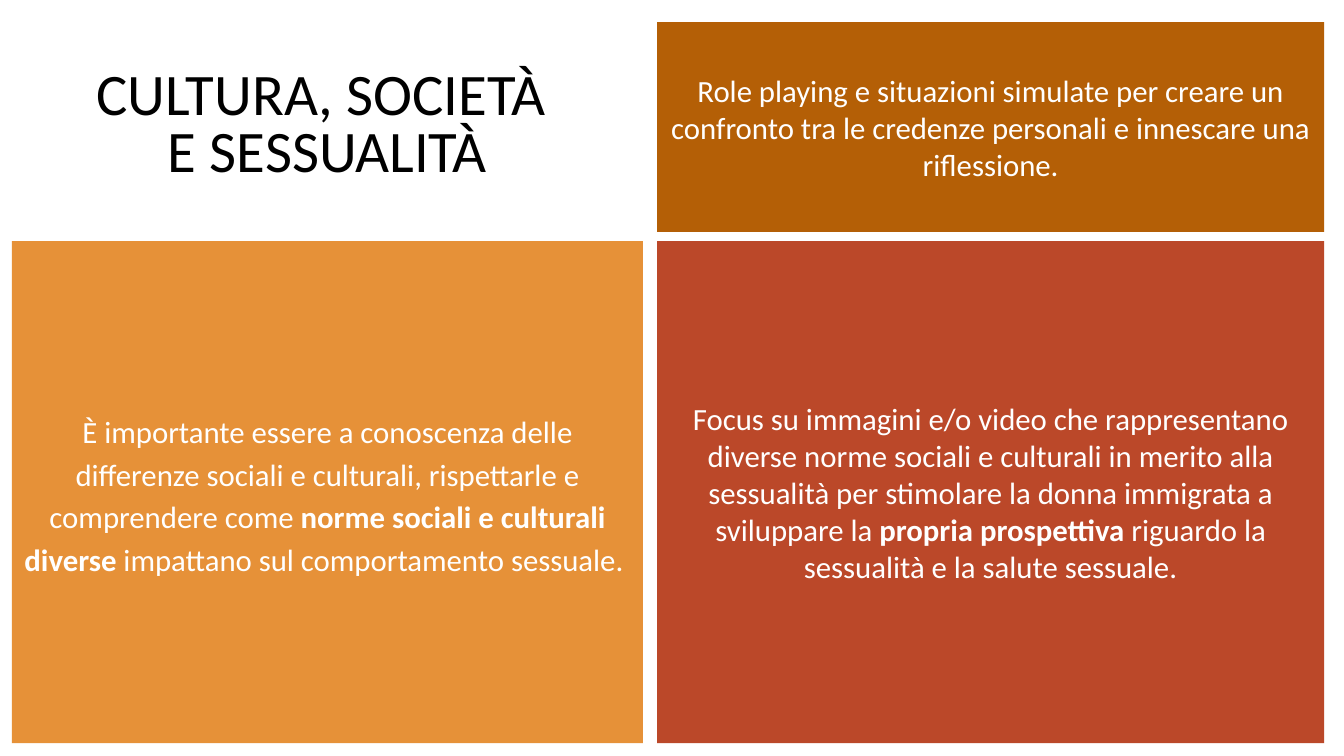
from collections import namedtuple

from lxml import etree
from pptx import Presentation
from pptx.dml.color import RGBColor
from pptx.enum.shapes import MSO_SHAPE
from pptx.enum.text import MSO_ANCHOR, MSO_AUTO_SIZE, PP_ALIGN
from pptx.oxml.ns import qn
from pptx.util import Pt

RECTANGLE = MSO_SHAPE.RECTANGLE
MIDDLE = MSO_ANCHOR.MIDDLE
NO_AUTOFIT = MSO_AUTO_SIZE.NONE
CENTER = PP_ALIGN.CENTER
TITLE_ONLY = 5
FONT = "Calibri"

Box = namedtuple("Box", "left top width height")

LEFT, TOP = 8.6, 15.8
COLUMN_GAP, ROW_GAP = 10, 6.7
LEFT_WIDTH, RIGHT_WIDTH = 450.7, 476.6
TOP_HEIGHT, BOTTOM_HEIGHT = 149.8, 358.6
RIGHT = LEFT + LEFT_WIDTH + COLUMN_GAP
BOTTOM = TOP + TOP_HEIGHT + ROW_GAP

TITLE_LINES = ["CULTURA, SOCIETÀ ", "E SESSUALITÀ"]
ROLE_PLAYING = [
    ("Role playing e situazioni simulate per creare un confronto tra le "
     "credenze personali e innescare una riflessione.", False),
]
AWARENESS = [
    ("È importante essere a conoscenza delle differenze sociali e culturali, "
     "rispettarle e comprendere come ", False),
    ("norme sociali e culturali diverse", True),
    (" impattano sul comportamento sessuale. ", False),
]
FOCUS = [
    ("Focus su immagini e/o video che rappresentano diverse norme sociali e "
     "culturali in merito alla sessualità per stimolare la donna immigrata a "
     "sviluppare la ", False),
    ("propria prospettiva", True),
    (" riguardo la sessualità e la salute sessuale.", False),
]


def color(value):
    return RGBColor.from_string(value)


def format_frame(frame, vertical_inset):
    frame.word_wrap = True
    frame.auto_size = NO_AUTOFIT
    frame.vertical_anchor = MIDDLE
    frame.margin_left = frame.margin_right = Pt(7.2)
    frame.margin_top = frame.margin_bottom = Pt(vertical_inset)


def format_para(para, size, text_color, line_spacing):
    para.alignment = CENTER
    para.line_spacing = line_spacing
    para.font.name = FONT
    para.font.size = Pt(size)
    para.font.color.rgb = color(text_color)


def add_title(page, box):
    title = page.shapes.title
    title.left, title.top, title.width, title.height = map(Pt, box)
    frame = title.text_frame
    format_frame(frame, 3.6)
    frame.text = "\n".join(TITLE_LINES)
    for para in frame.paragraphs:
        format_para(para, 42, "000000", 0.8)
        para.space_before = Pt(0)


def add_panel(page, box, fill, spans, line_spacing=1.0, spacing=0, opacity=100):
    panel = page.shapes.add_shape(RECTANGLE, *map(Pt, box))
    panel.shadow.inherit = False
    panel.fill.solid()
    panel.fill.fore_color.rgb = color(fill)
    panel.line.fill.background()
    if opacity < 100:
        fill_color = panel.element.spPr.find(qn("a:solidFill"))[0]
        etree.SubElement(fill_color, qn("a:alpha"), val=str(opacity * 1000))
    format_frame(panel.text_frame, 7.2)
    para = panel.text_frame.paragraphs[0]
    format_para(para, 22, "FFFFFF", line_spacing)
    para.space_before = para.space_after = Pt(spacing)
    for text, bold in spans:
        span = para.add_run()
        span.text = text
        if bold:
            span.font.bold = True


def add_culture_page(deck):
    page = deck.slides.add_slide(deck.slide_layouts[TITLE_ONLY])
    add_title(page, Box(LEFT, TOP, LEFT_WIDTH, TOP_HEIGHT))
    add_panel(page, Box(RIGHT, TOP, RIGHT_WIDTH, TOP_HEIGHT), "B45F06", ROLE_PLAYING)
    add_panel(page, Box(LEFT, BOTTOM, LEFT_WIDTH, BOTTOM_HEIGHT), "E69138",
              AWARENESS, line_spacing=1.15, spacing=12)
    add_panel(page, Box(RIGHT, BOTTOM, RIGHT_WIDTH, BOTTOM_HEIGHT), "B43512",
              FOCUS, opacity=90)


def main():
    deck = Presentation()
    deck.slide_width, deck.slide_height = Pt(960), Pt(540)
    add_culture_page(deck)
    deck.save("out.pptx")


if __name__ == "__main__":
    main()
